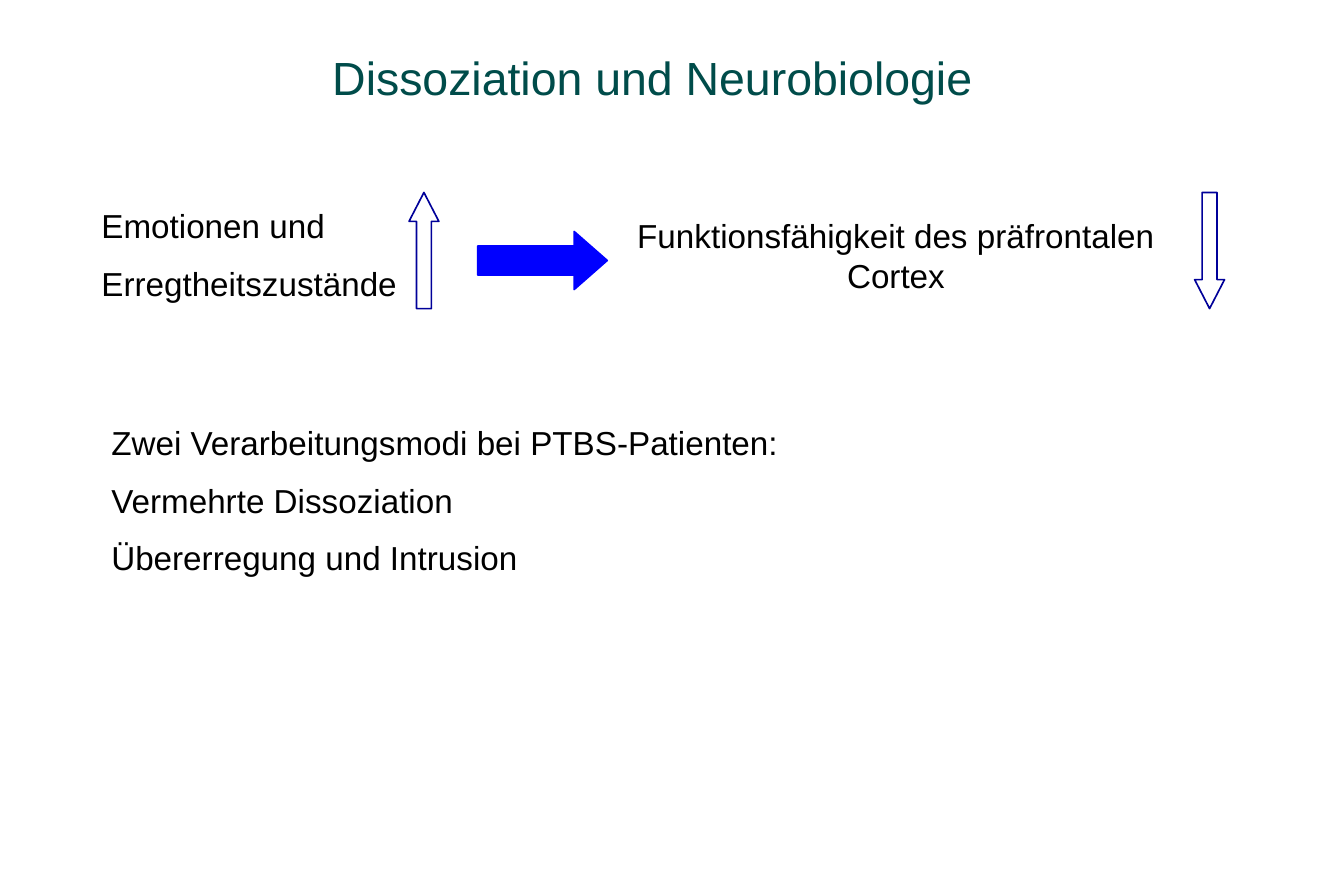
"""Build the slide on dissociation and neurobiology."""
import pptx
import pptx.util
import pptx.dml.color
import pptx.enum.shapes
import pptx.enum.text

Pt = pptx.util.Pt
RGB = pptx.dml.color.RGBColor.from_string
SHAPE = pptx.enum.shapes.MSO_SHAPE
ALIGN = pptx.enum.text.PP_ALIGN

theme = {
    "title": {"name": "Arial", "size": Pt(28), "color": RGB("004C4A")},
    "body": {"name": "Arial", "size": Pt(20), "color": RGB("000000")},
    "outline": {"fill": RGB("FFFFFF"), "line": RGB("000099")},
    "solid": {"fill": RGB("0000FF"), "line": RGB("0000FF")},
}

prs = pptx.Presentation()
prs.slide_width, prs.slide_height = Pt(810), Pt(540)
s = prs.slides.add_slide(prs.slide_layouts[6])

arrows = [
    (SHAPE.UP_ARROW, "outline", 0.97, (246.5, 116, 18, 70)),
    (SHAPE.RIGHT_ARROW, "solid", 0.57, (288, 139.5, 78, 35)),
    (SHAPE.DOWN_ARROW, "outline", 0.97, (720, 116, 18, 70)),
]
for kind, style, head, box in arrows:
    sp = s.shapes.add_shape(kind, *map(Pt, box))
    sp.shadow.inherit = False
    sp.adjustments[0], sp.adjustments[1] = 0.5, head
    sp.fill.solid()
    sp.fill.fore_color.rgb = theme[style]["fill"]
    sp.line.color.rgb = theme[style]["line"]
    sp.line.width = Pt(1)

texts = [
    ("title", ALIGN.CENTER, (48, 26, 690, 90), ["Dissoziation und Neurobiologie"]),
    ("body", ALIGN.LEFT, (54, 120.5, 372, 67), ["Emotionen und", "Erregtheitszustände"]),
    ("body", ALIGN.CENTER, (354, 126.5, 372, 55),
     ["Funktionsfähigkeit des präfrontalen Cortex"]),
    ("body", ALIGN.LEFT, (60, 251, 582, 103),
     ["Zwei Verarbeitungsmodi bei PTBS-Patienten:", "Vermehrte Dissoziation",
      "Übererregung und Intrusion"]),
]
for style, align, box, lines in texts:
    tf = s.shapes.add_textbox(*map(Pt, box)).text_frame
    tf.word_wrap = True
    for i, line in enumerate(lines):
        p = tf.add_paragraph() if i else tf.paragraphs[0]
        p.alignment = align
        if i:
            p.space_before = Pt(10.7)
        r = p.add_run()
        r.text = line
        for key, value in theme[style].items():
            if key == "color":
                r.font.color.rgb = value
            else:
                setattr(r.font, key, value)

prs.save("out.pptx")
